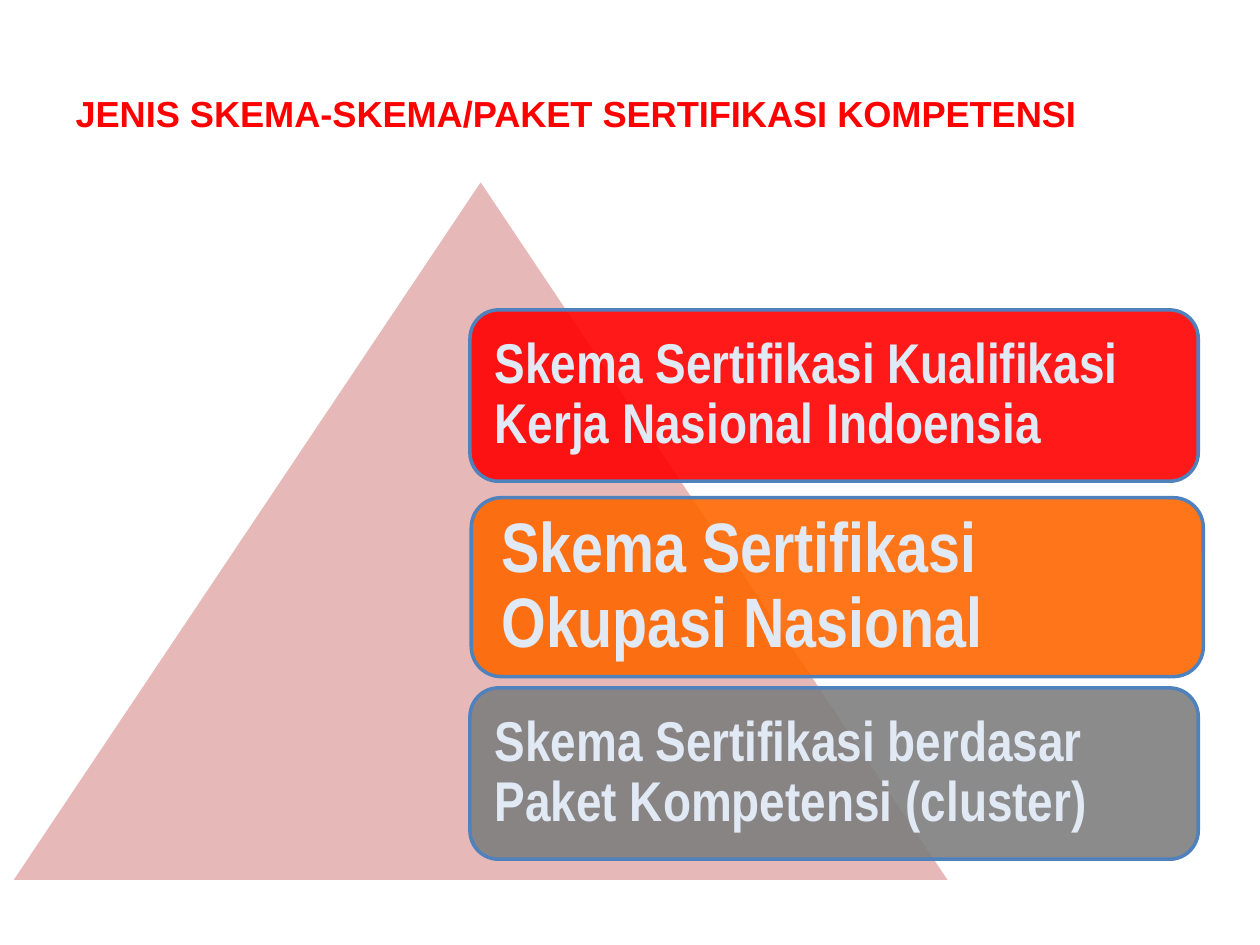
from dataclasses import dataclass

from lxml.etree import SubElement
from pptx import Presentation
from pptx.dml.color import RGBColor
from pptx.enum.shapes import MSO_SHAPE
from pptx.enum.text import MSO_ANCHOR, PP_ALIGN
from pptx.oxml.ns import qn
from pptx.shapes.autoshape import Shape
from pptx.slide import Slide
from pptx.util import Inches, Pt

COLORS = {
    "title": "FF0000",
    "pyramid": "E6B9B8",
    "pyramid_edge": "FFFFFF",
    "qualification": "FF0000",
    "occupation": "FF6600",
    "cluster": "7F7F7F",
    "scheme_edge": "4F81BD",
    "scheme_text": "E0E9F4",
}


@dataclass(frozen=True)
class Scheme:
    """A certification scheme card, measured in inches and points."""

    text: str
    color: str
    left: float
    top: float
    width: float = 5.78
    height: float = 1.36
    size: float = 32
    inset: float = 0.13


SCHEMES = [
    Scheme("Skema Sertifikasi Kualifikasi Kerja Nasional Indoensia", "qualification", 3.73, 2.46),
    Scheme("Skema Sertifikasi Okupasi Nasional", "occupation", 3.74, 3.95, 5.81, 1.42, 40, 0.17),
    Scheme("Skema Sertifikasi berdasar Paket Kompetensi (cluster)", "cluster", 3.73, 5.46),
]


def rgb(name: str) -> RGBColor:
    """Look up a named colour."""
    return RGBColor.from_string(COLORS[name])


def write(shape: Shape, text: str, font: str, size: float, color: str,
          inset: float, line_spacing: float) -> None:
    """Fill a shape with one bold, left-aligned paragraph."""
    frame = shape.text_frame
    frame_format = {"word_wrap": True, "vertical_anchor": MSO_ANCHOR.MIDDLE}
    for side in ("left", "top", "right", "bottom"):
        frame_format[f"margin_{side}"] = Inches(inset)
    for name, value in frame_format.items():
        setattr(frame, name, value)
    frame.text = text
    paragraph = frame.paragraphs[0]
    paragraph.alignment = PP_ALIGN.LEFT
    paragraph.line_spacing = line_spacing
    run_font = paragraph.runs[0].font
    for name, value in {"name": font, "size": Pt(size), "bold": True}.items():
        setattr(run_font, name, value)
    run_font.color.rgb = rgb(color)


def add_figure(slide: Slide, kind: MSO_SHAPE, left: float, top: float, width: float,
               height: float, fill: str, edge: str) -> Shape:
    """Add a flat preset shape with a 2 pt outline."""
    figure = slide.shapes.add_shape(
        kind, Inches(left), Inches(top), Inches(width), Inches(height))
    figure.shadow.inherit = False
    figure.fill.solid()
    figure.fill.fore_color.rgb = rgb(fill)
    figure.line.color.rgb = rgb(edge)
    figure.line.width = Pt(2)
    return figure


def add_scheme(slide: Slide, scheme: Scheme) -> None:
    """Add a scheme card that is 90 % opaque."""
    card = add_figure(slide, MSO_SHAPE.ROUNDED_RECTANGLE, scheme.left, scheme.top,
                      scheme.width, scheme.height, scheme.color, "scheme_edge")
    fill_color = card.fill._xPr.find(qn("a:solidFill"))[0]
    SubElement(fill_color, qn("a:alpha"), val="90000")
    write(card, scheme.text, "Arial Narrow", scheme.size, "scheme_text", scheme.inset, 0.9)


def main() -> None:
    """Build the slide and save it."""
    deck = Presentation()
    deck.slide_width, deck.slide_height = Inches(10), Inches(7.5)
    slide = deck.slides.add_slide(deck.slide_layouts[5])

    title = slide.shapes.title
    place = {"left": 0.5, "top": 0.5, "width": 9, "height": 0.8}
    for name, value in place.items():
        setattr(title, name, Inches(value))
    write(title, "JENIS SKEMA-SKEMA/PAKET SERTIFIKASI KOMPETENSI", "Arial", 20.7, "title", 0.1, 1.0)

    add_figure(slide, MSO_SHAPE.ISOSCELES_TRIANGLE, 0.08, 1.42, 7.47, 5.58,
               "pyramid", "pyramid_edge")
    for scheme in SCHEMES:
        add_scheme(slide, scheme)

    deck.save("out.pptx")


if __name__ == "__main__":
    main()
